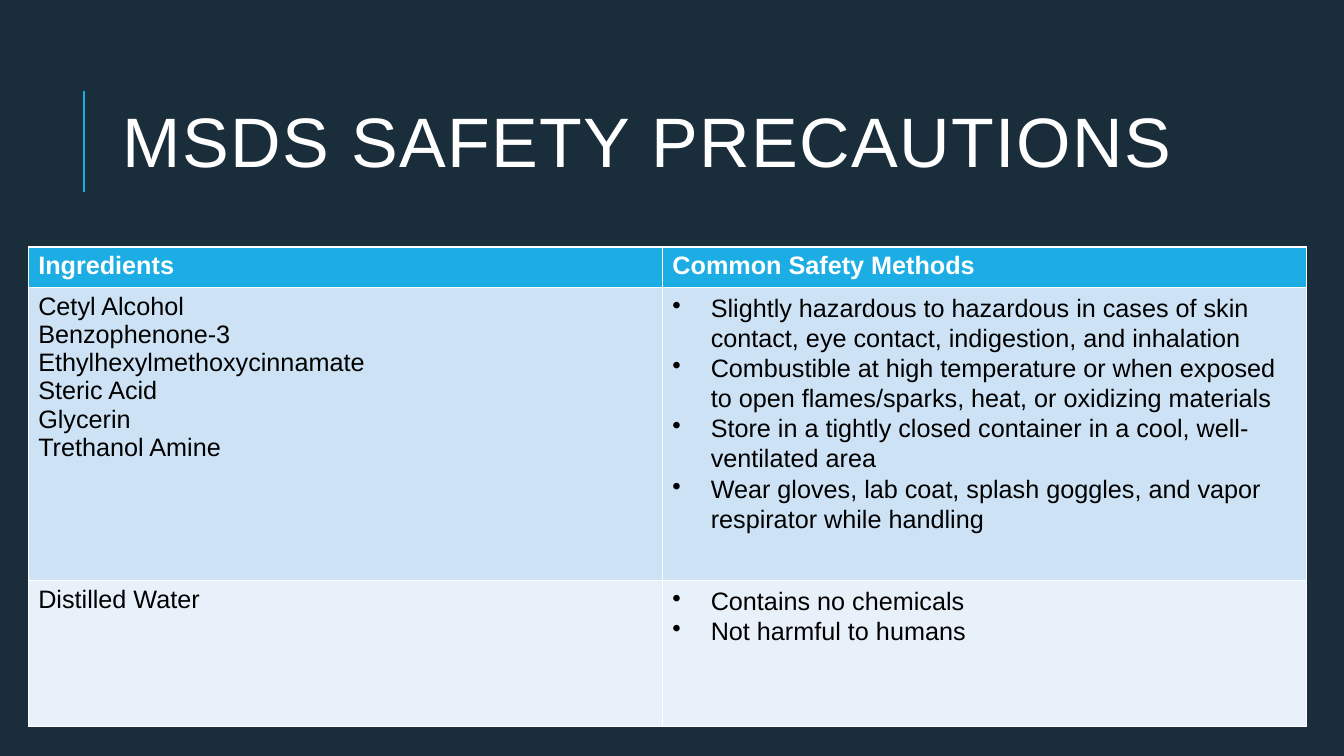
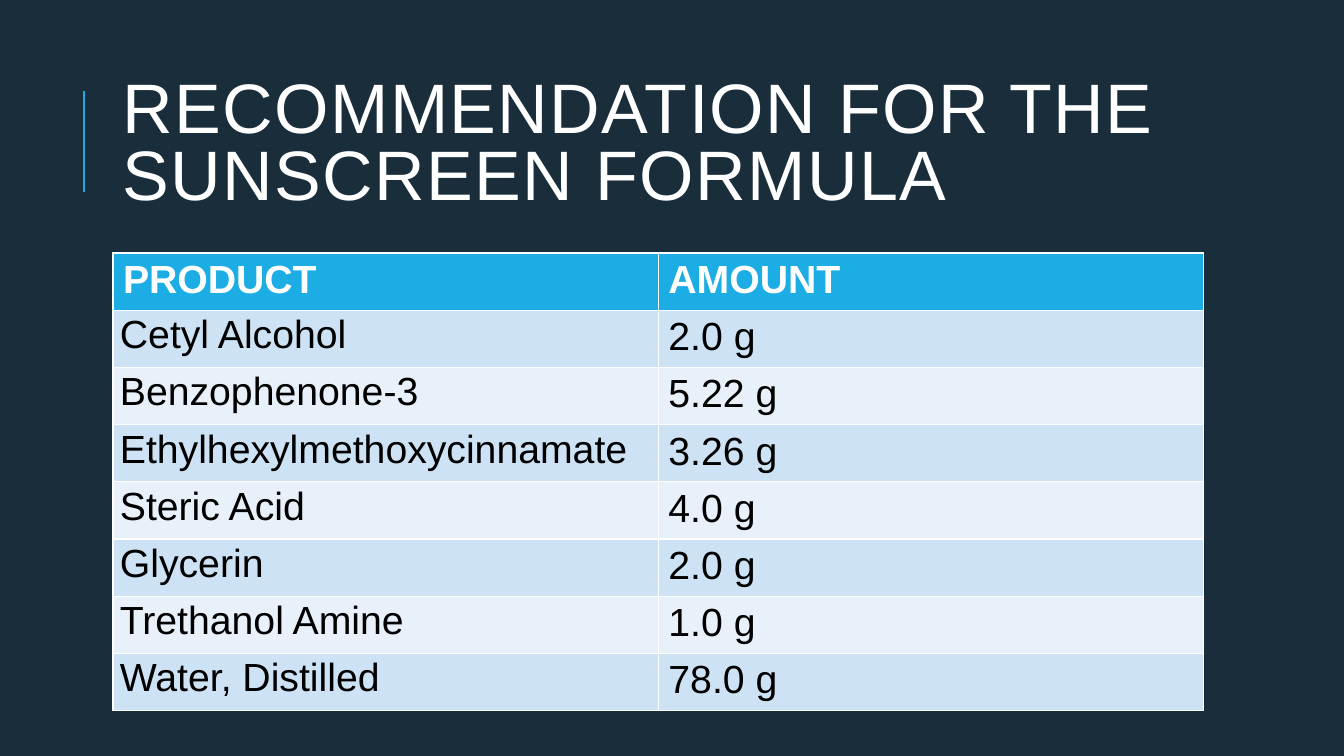
"""Build two sunscreen slides: safety precautions and recommended formula."""
import pptx
import pptx.dml.color
import pptx.enum.shapes
import pptx.enum.text
import pptx.oxml
import pptx.oxml.ns
import pptx.util

Inches = pptx.util.Inches
Pt = pptx.util.Pt
FONT = "Arial"
NAVY, BLUE, WHITE, BLACK = "1A2D3A", "1CADE4", "FFFFFF", "000000"
BANDS = ["CDE3F5", "E8F1FA"]


def rgb(value):
    return pptx.dml.color.RGBColor.from_string(value)


def style_run(r, size, color, bold=False):
    r.font.name = FONT
    r.font.size = Pt(size)
    r.font.bold = bold
    r.font.color.rgb = rgb(color)


slides = [
    {
        "title": "MSDS SAFETY PRECAUTIONS",
        "left": 0.28, "top": 2.45, "size": 18,
        "cols": [6.29, 6.39], "heights": [0.37, 2.91, 1.45],
        "spaced_col": 1, "bullets": True,
        "rows": [
            ["Ingredients", "Common Safety Methods"],
            ["Cetyl Alcohol\nBenzophenone-3\nEthylhexylmethoxycinnamate\n"
             "Steric Acid\nGlycerin\nTrethanol Amine",
             "Slightly hazardous to hazardous in cases of skin contact, "
             "eye contact, indigestion, and inhalation\n"
             "Combustible at high temperature or when exposed to open "
             "flames/sparks, heat, or oxidizing materials\n"
             "Store in a tightly closed container in a cool, well-ventilated area\n"
             "Wear gloves, lab coat, splash goggles, and vapor respirator "
             "while handling"],
            ["Distilled Water", "Contains no chemicals\nNot harmful to humans"],
        ],
    },
    {
        "title": "RECOMMENDATION FOR THE SUNSCREEN FORMULA",
        "left": 1.12, "top": 2.51, "size": 28,
        "cols": [5.41, 5.41], "heights": [0.53] * 8,
        "spaced_col": 0, "bullets": False,
        "rows": [
            ["PRODUCT", "AMOUNT"],
            ["Cetyl Alcohol", "2.0 g"],
            ["Benzophenone-3", "5.22 g"],
            ["Ethylhexylmethoxycinnamate", "3.26 g"],
            ["Steric Acid", "4.0 g"],
            ["Glycerin", "2.0 g"],
            ["Trethanol Amine", "1.0 g"],
            ["Water, Distilled", "78.0 g"],
        ],
    },
]

prs = pptx.Presentation()
prs.slide_width = Inches(13.33)
prs.slide_height = Inches(7.5)

for data in slides:
    s = prs.slides.add_slide(prs.slide_layouts[6])
    s.background.fill.solid()
    s.background.fill.fore_color.rgb = rgb(NAVY)

    line = s.shapes.add_connector(
        pptx.enum.shapes.MSO_CONNECTOR.STRAIGHT,
        Inches(0.83), Inches(1.9), Inches(0.83), Inches(0.9))
    line.line.color.rgb = rgb(BLUE)
    line.line.width = Pt(1.5)
    pptx.oxml.ns.qn("a:effectLst")
    line._element.spPr.append(pptx.oxml.parse_xml(
        "<a:effectLst %s/>" % pptx.oxml.ns.nsdecls("a")))

    sp = s.shapes.add_textbox(Inches(1.12), Inches(0.64), Inches(10.63), Inches(1.64))
    tf = sp.text_frame
    tf.word_wrap = True
    tf.vertical_anchor = pptx.enum.text.MSO_ANCHOR.MIDDLE
    p = tf.paragraphs[0]
    p.text = data["title"]
    p.line_spacing = 0.8
    r = p.runs[0]
    style_run(r, 50, WHITE)
    r.font._element.set("spc", "100")

    rows, cols, heights = data["rows"], data["cols"], data["heights"]
    table = s.shapes.add_table(
        len(rows), len(cols), Inches(data["left"]), Inches(data["top"]),
        Inches(sum(cols)), Inches(sum(heights))).table
    for column, width in zip(table.columns, cols):
        column.width = Inches(width)
    for row, height in zip(table.rows, heights):
        row.height = Inches(height)

    for i, texts in enumerate(rows):
        header = i == 0
        for j, text in enumerate(texts):
            cell = table.cell(i, j)
            cell.fill.solid()
            cell.fill.fore_color.rgb = rgb(BLUE if header else BANDS[(i - 1) % 2])
            cell.text_frame.text = text
            spaced = not header and j == data["spaced_col"]
            if spaced and not data["bullets"]:
                cell.margin_left = cell.margin_right = Inches(0.07)
                cell.margin_top = cell.margin_bottom = 0
            for p in cell.text_frame.paragraphs:
                style_run(p.runs[0], data["size"], WHITE if header else BLACK, header)
                if spaced:
                    p.line_spacing = 1.07
                if spaced and data["bullets"]:
                    pPr = p._p.get_or_add_pPr()
                    pPr.set("marL", str(Inches(0.38)))
                    pPr.set("indent", str(-Inches(0.38)))
                    pPr.append(pptx.oxml.parse_xml(
                        '<a:buChar %s char="•"/>' % pptx.oxml.ns.nsdecls("a")))

prs.save("out.pptx")
